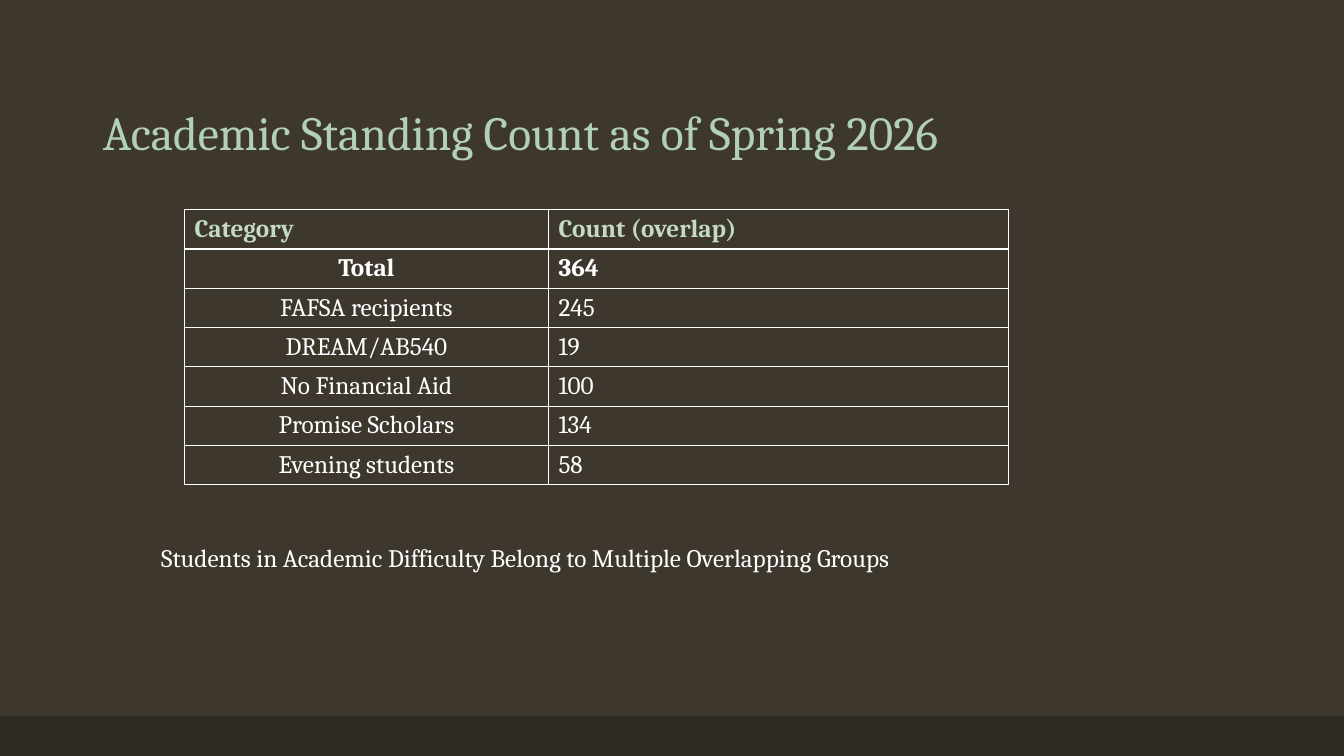
import pptx
import pptx.dml.color
import pptx.enum.shapes
import pptx.enum.text
import pptx.oxml
import pptx.oxml.ns
import pptx.util

Inches = pptx.util.Inches
Align = pptx.enum.text.PP_ALIGN
Anchor = pptx.enum.text.MSO_ANCHOR

BACKGROUND = "3D372E"
FOOTER = "2E2923"
TITLE = "B2D0B4"
HEADER = "C3DBC5"
WHITE = "FFFFFF"

STANDING_ROWS = [
    ("Category", "Count (overlap)"),
    ("Total", "364"),
    ("FAFSA recipients", "245"),
    ("DREAM/AB540", "19"),
    ("No Financial Aid", "100"),
    ("Promise Scholars", "134"),
    ("Evening students", "58"),
]


def color(value):
    return pptx.dml.color.RGBColor.from_string(value)


def paint(fill, value):
    fill.solid()
    fill.fore_color.rgb = color(value)


def write(frame, text, size=18, fill=WHITE, bold=False, align=Align.LEFT, spacing=1.0):
    para = frame.paragraphs[0]
    para.alignment = align
    para.line_spacing = spacing
    span = para.add_run()
    span.text = text
    span.font.name = "Cambria"
    span.font.size = pptx.util.Pt(size)
    span.font.bold = bold
    span.font.color.rgb = color(fill)


def add_border(cell, value, points):
    properties = cell._tc.get_or_add_tcPr()
    for position, side in enumerate(("lnL", "lnR", "lnT", "lnB")):
        line = pptx.oxml.parse_xml(
            f'<a:{side} {pptx.oxml.ns.nsdecls("a")} w="{pptx.util.Pt(points)}">'
            f'<a:solidFill><a:srgbClr val="{value}"/></a:solidFill></a:{side}>'
        )
        properties.insert(position, line)


def add_footer_band(page, left, top, width, height):
    band = page.shapes.add_shape(
        pptx.enum.shapes.MSO_SHAPE.RECTANGLE,
        Inches(left), Inches(top), Inches(width), Inches(height),
    )
    band.shadow.inherit = False
    paint(band.fill, FOOTER)
    band.line.fill.background()


def add_title(page, left, top, width, height):
    title = page.shapes.title
    title.left, title.top = Inches(left), Inches(top)
    title.width, title.height = Inches(width), Inches(height)
    frame = title.text_frame
    frame.auto_size = pptx.enum.text.MSO_AUTO_SIZE.NONE
    frame.vertical_anchor = Anchor.BOTTOM
    write(frame, "Academic Standing Count as of Spring 2026", size=34, fill=TITLE, spacing=0.9)


def add_standing_table(page, left, top, widths, row_height):
    holder = page.shapes.add_table(
        len(STANDING_ROWS), len(widths), Inches(left), Inches(top),
        Inches(sum(widths)), Inches(row_height * len(STANDING_ROWS)),
    )
    table = holder.table
    for column, width in zip(table.columns, widths):
        column.width = Inches(width)
    for row_index, values in enumerate(STANDING_ROWS):
        table.rows[row_index].height = Inches(row_height)
        is_header = row_index == 0
        for column_index, value in enumerate(values):
            cell = table.cell(row_index, column_index)
            cell.margin_top = cell.margin_bottom = 0
            cell.vertical_anchor = Anchor.MIDDLE
            paint(cell.fill, BACKGROUND)
            add_border(cell, WHITE, 1)
            is_label = column_index == 0 and not is_header
            write(
                cell.text_frame, value,
                fill=HEADER if is_header else WHITE,
                bold=row_index < 2,  # header and total
                align=Align.CENTER if is_label else Align.LEFT,
            )


def add_note(page, left, top, width, height):
    box = page.shapes.add_textbox(Inches(left), Inches(top), Inches(width), Inches(height))
    box.text_frame.word_wrap = True
    box.text_frame.auto_size = pptx.enum.text.MSO_AUTO_SIZE.SHAPE_TO_FIT_TEXT
    write(box.text_frame, "Students in Academic Difficulty Belong to Multiple Overlapping Groups")


def main():
    deck = pptx.Presentation()
    deck.slide_width, deck.slide_height = Inches(13.33), Inches(7.5)

    # Title-only page with a dark background
    page = deck.slides.add_slide(deck.slide_layouts[5])
    paint(page.background.fill, BACKGROUND)

    # Regions from back to front
    add_footer_band(page, 0, 7.1, 13.33, 0.4)
    add_title(page, 0.92, 0.4, 11.5, 1.25)
    add_standing_table(page, 1.83, 2.08, (3.61, 4.56), 0.39)
    add_note(page, 1.5, 5.33, 8.67, 0.4)

    deck.save("out.pptx")


if __name__ == "__main__":
    main()
